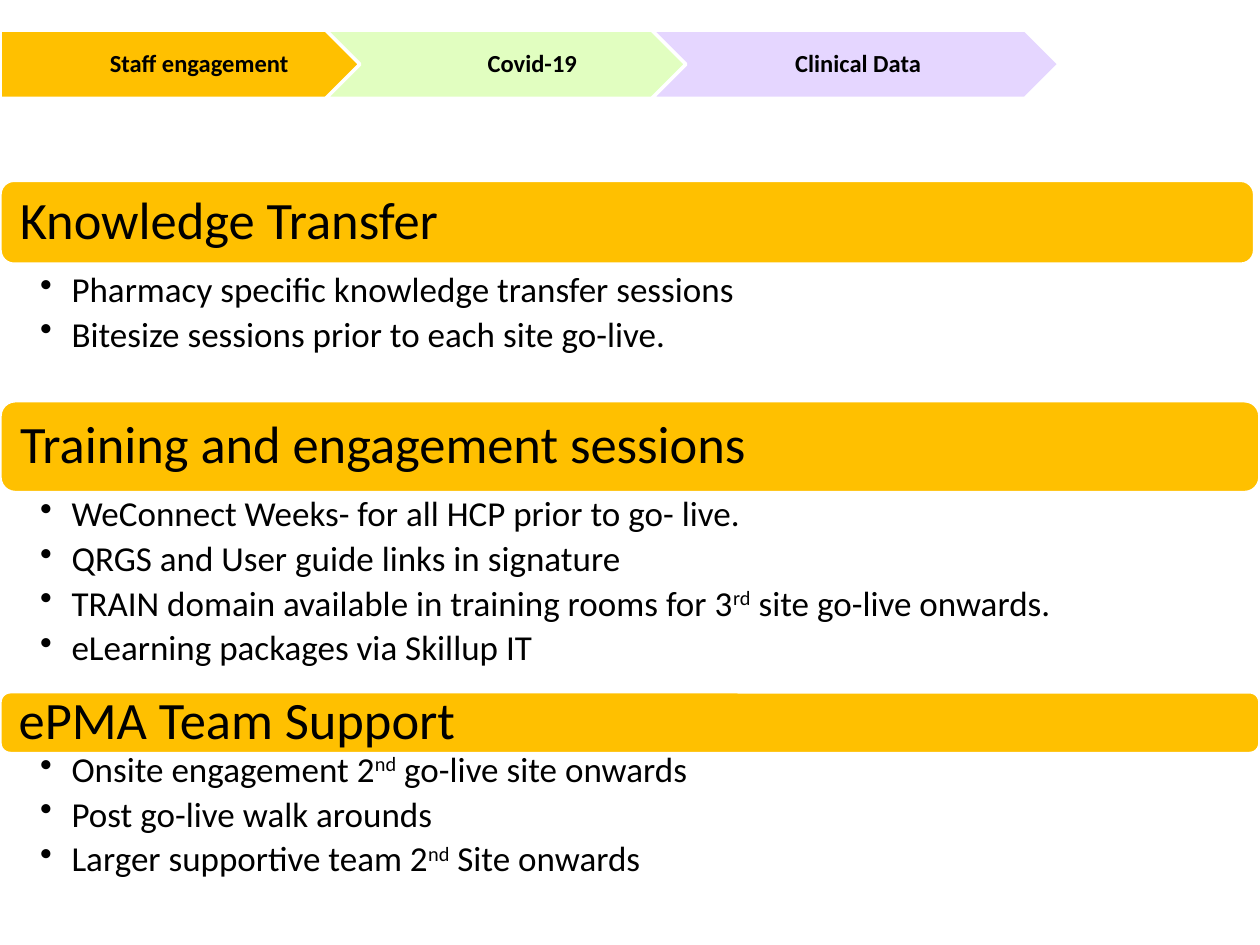
from pptx import Presentation
from pptx.dml.color import RGBColor
from pptx.enum.shapes import MSO_SHAPE
from pptx.enum.text import MSO_ANCHOR, PP_ALIGN
from pptx.oxml.ns import qn
from pptx.util import Pt
from lxml.etree import SubElement

FONT = "Calibri"
AMBER, GREEN, LILAC = "FFC000", "E1FEC0", "E5D6FF"
BLACK, WHITE = "000000", "FFFFFF"

STAGES = [
    ("Staff engagement", MSO_SHAPE.PENTAGON, AMBER, 6),
    ("Covid-19", MSO_SHAPE.CHEVRON, GREEN, 4.5),
    ("Clinical Data", MSO_SHAPE.CHEVRON, LILAC, 4.5),
]
STAGE_TOP, STAGE_WIDTH, STAGE_HEIGHT = 17.3, 232.8, 38.9
STAGE_STEP = 0.8 * STAGE_WIDTH

SECTIONS = [
    ("Knowledge Transfer", (103, 717, 48), (153.4, 75.6), [
        "Pharmacy specific knowledge transfer sessions",
        "Bitesize sessions prior to each site go-live.",
    ]),
    ("Training and engagement sessions", (229, 720, 52.5), (281.5, 108.7), [
        "WeConnect Weeks- for all HCP prior to go- live.",
        "QRGS and User guide links in signature",
        "TRAIN domain available in training rooms for 3^rd^ site go-live onwards.",
        "eLearning packages via Skillup IT",
    ]),
    ("ePMA Team Support", (395.3, 720, 35.3), (427.7, 77.8), [
        "Onsite engagement 2^nd^ go-live site onwards",
        "Post go-live walk arounds",
        "Larger supportive team 2^nd^ Site onwards",
    ]),
]


def rgb(value):
    return RGBColor.from_string(value)


def set_insets(frame, left, top, right, bottom):
    frame.margin_left, frame.margin_top = Pt(left), Pt(top)
    frame.margin_right, frame.margin_bottom = Pt(right), Pt(bottom)


def style_font(font, size, bold=False):
    font.name = FONT
    font.size = Pt(size)
    font.bold = bold
    font.color.rgb = rgb(BLACK)


def add_label(slide, kind, box, fill, text, size, bold, align, insets):
    label = slide.shapes.add_shape(kind, *map(Pt, box))
    label.shadow.inherit = False
    label.fill.solid()
    label.fill.fore_color.rgb = rgb(fill)
    label.line.color.rgb = rgb(WHITE)
    label.line.width = Pt(2)
    frame = label.text_frame
    frame.word_wrap = True
    frame.vertical_anchor = MSO_ANCHOR.MIDDLE
    set_insets(frame, *insets)
    frame.text = text
    paragraph = frame.paragraphs[0]
    paragraph.alignment = align
    paragraph.line_spacing = 0.9
    style_font(paragraph.runs[0].font, size, bold)


def add_bullet(paragraph, text):
    paragraph.level = 1
    paragraph.line_spacing = 0.9
    paragraph.space_after = Pt(4)
    properties = paragraph._p.get_or_add_pPr()
    properties.set("marL", str(Pt(18)))
    properties.set("indent", str(Pt(-18)))
    SubElement(properties, qn("a:buChar")).set("char", "•")
    for position, part in enumerate(text.split("^")):
        run = paragraph.add_run()
        run.text = part
        style_font(run.font, 20)
        if position % 2:
            run._r.get_or_add_rPr().set("baseline", "30000")


def add_bullets(slide, top, height, points):
    frame = slide.shapes.add_textbox(0, Pt(top), Pt(720), Pt(height)).text_frame
    frame.word_wrap = True
    set_insets(frame, 22.9, 2, 11.5, 2)
    for index, point in enumerate(points):
        add_bullet(frame.add_paragraph() if index else frame.paragraphs[0], point)


def main():
    deck = Presentation()
    deck.slide_width, deck.slide_height = Pt(720), Pt(540)
    slide = deck.slides.add_slide(deck.slide_layouts[6])

    for index, (stage, kind, fill, left_inset) in enumerate(STAGES):
        box = (index * STAGE_STEP, STAGE_TOP, STAGE_WIDTH, STAGE_HEIGHT)
        add_label(slide, kind, box, fill, stage, 14, True,
                  PP_ALIGN.CENTER, (left_inset, 3, 1.5, 3))

    for heading, (top, width, height), (list_top, list_height), points in SECTIONS:
        add_label(slide, MSO_SHAPE.ROUNDED_RECTANGLE, (0, top, width, height), AMBER,
                  heading, 30, False, PP_ALIGN.LEFT, (9, 9, 9, 9))
        add_bullets(slide, list_top, list_height, points)

    deck.save("out.pptx")


if __name__ == "__main__":
    main()
